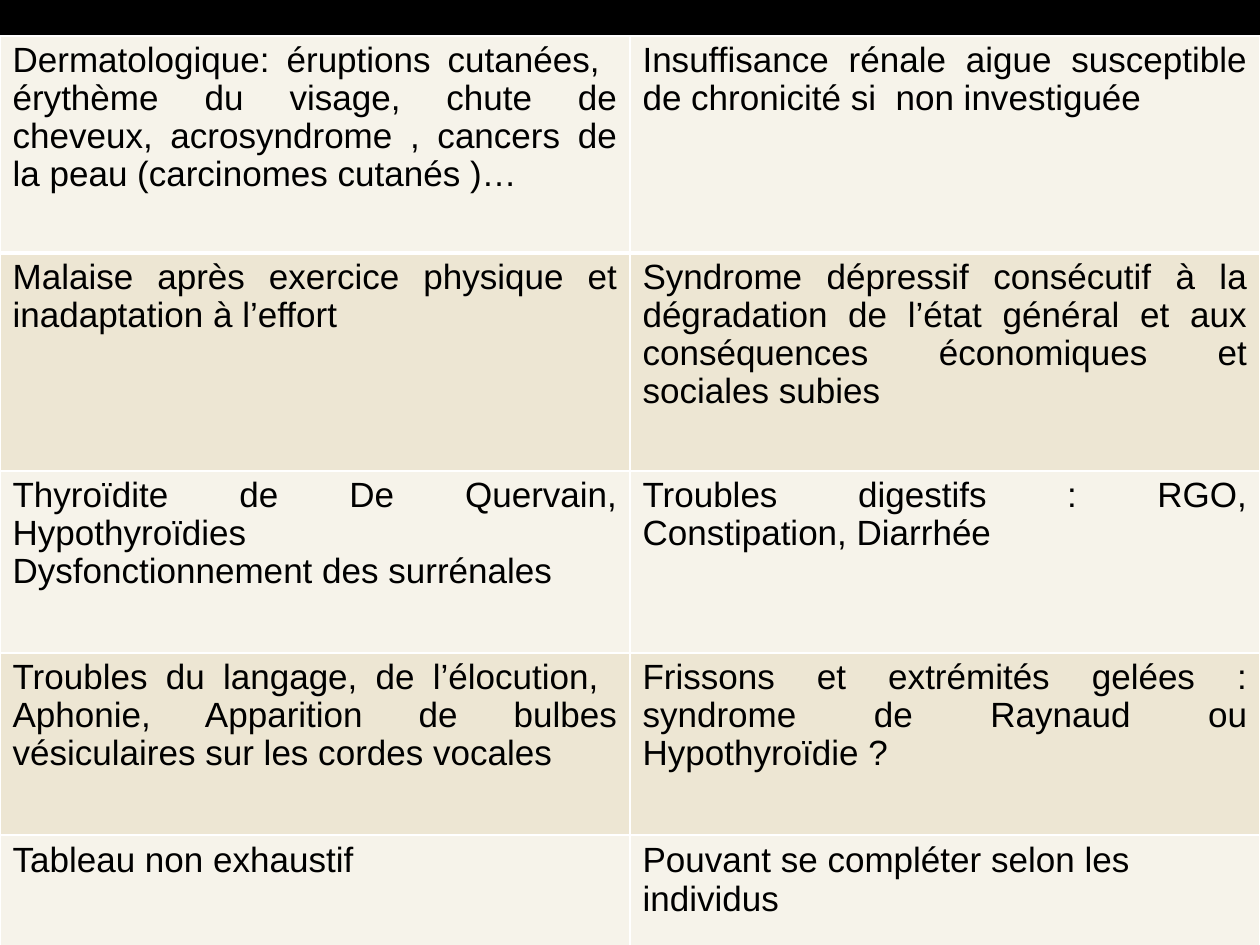
"""Build the slide that tabulates further symptoms in two columns."""
import pptx
import pptx.dml.color
import pptx.enum.text
import pptx.oxml
import pptx.oxml.ns
import pptx.util

PX = 914400 // 126
SLIDE = (1260, 945)
TABLE_TOP = 36
ROW_HEIGHTS = [217, 218, 182, 182, 191]

THEME = {
    "font": "Arial",
    "size": 20,
    "background": "000000",
    "text": "000000",
    "bands": ["F6F3EA", "EDE6D3"],
    "border": "FFFFFF",
    "thin": 1,
    "thick": 3,
    "justified_spacing": 0.97,
}

SYMPTOMS = [
    (["Dermatologique: éruptions cutanées,  érythème du visage, chute de cheveux, "
      "acrosyndrome , cancers de la peau (carcinomes cutanés )…"],
     ["Insuffisance rénale aigue susceptible de chronicité si  non investiguée"]),
    (["Malaise après exercice physique et inadaptation à l’effort"],
     ["Syndrome dépressif consécutif à la dégradation de l’état général et aux "
      "conséquences économiques et sociales subies"]),
    (["Thyroïdite de De Quervain, Hypothyroïdies", "Dysfonctionnement des surrénales"],
     ["Troubles digestifs : RGO, Constipation, Diarrhée"]),
    (["Troubles du langage, de l’élocution,  Aphonie, Apparition de bulbes "
      "vésiculaires sur les cordes vocales"],
     ["Frissons et extrémités gelées : syndrome de Raynaud ou Hypothyroïdie ?"]),
]
CLOSING = (["Tableau non exhaustif"], ["Pouvant se compléter selon les individus"])


def rgb(value):
    return pptx.dml.color.RGBColor.from_string(value)


def set_borders(cell, widths):
    properties = cell._tc.get_or_add_tcPr()
    for position, (side, points) in enumerate(widths.items()):
        border = pptx.oxml.parse_xml(
            f'<a:{side} {pptx.oxml.ns.nsdecls("a")} w="{pptx.util.Pt(points)}">'
            f'<a:solidFill><a:srgbClr val="{THEME["border"]}"/></a:solidFill></a:{side}>')
        properties.insert(position, border)


def write(cell, paragraphs, justified):
    for index, wording in enumerate(paragraphs):
        frame = cell.text_frame
        paragraph = frame.add_paragraph() if index else frame.paragraphs[0]
        if justified:
            paragraph.alignment = pptx.enum.text.PP_ALIGN.JUSTIFY
            paragraph.line_spacing = THEME["justified_spacing"]
        run = paragraph.add_run()
        run.text = wording
        run.font.name = THEME["font"]
        run.font.size = pptx.util.Pt(THEME["size"])
        run.font.bold = False
        run.font.color.rgb = rgb(THEME["text"])


def main():
    presentation = pptx.Presentation()
    presentation.slide_width, presentation.slide_height = (side * PX for side in SLIDE)
    slide = presentation.slides.add_slide(presentation.slide_layouts[6])
    slide.background.fill.solid()
    slide.background.fill.fore_color.rgb = rgb(THEME["background"])

    rows = SYMPTOMS + [CLOSING]
    table = slide.shapes.add_table(
        len(rows), 2, 0, TABLE_TOP * PX, SLIDE[0] * PX, sum(ROW_HEIGHTS) * PX).table
    for r, (height, row) in enumerate(zip(ROW_HEIGHTS, rows)):
        table.rows[r].height = height * PX
        widths = dict.fromkeys(("lnL", "lnR", "lnT", "lnB"), THEME["thin"])
        if r == 0:
            widths["lnB"] = THEME["thick"]
        if r == 1:
            widths["lnT"] = THEME["thick"]
        for c, paragraphs in enumerate(row):
            cell = table.cell(r, c)
            cell.fill.solid()
            cell.fill.fore_color.rgb = rgb(THEME["bands"][r % 2])
            set_borders(cell, widths)
            write(cell, paragraphs, row is not CLOSING)

    presentation.save("out.pptx")


if __name__ == "__main__":
    main()
